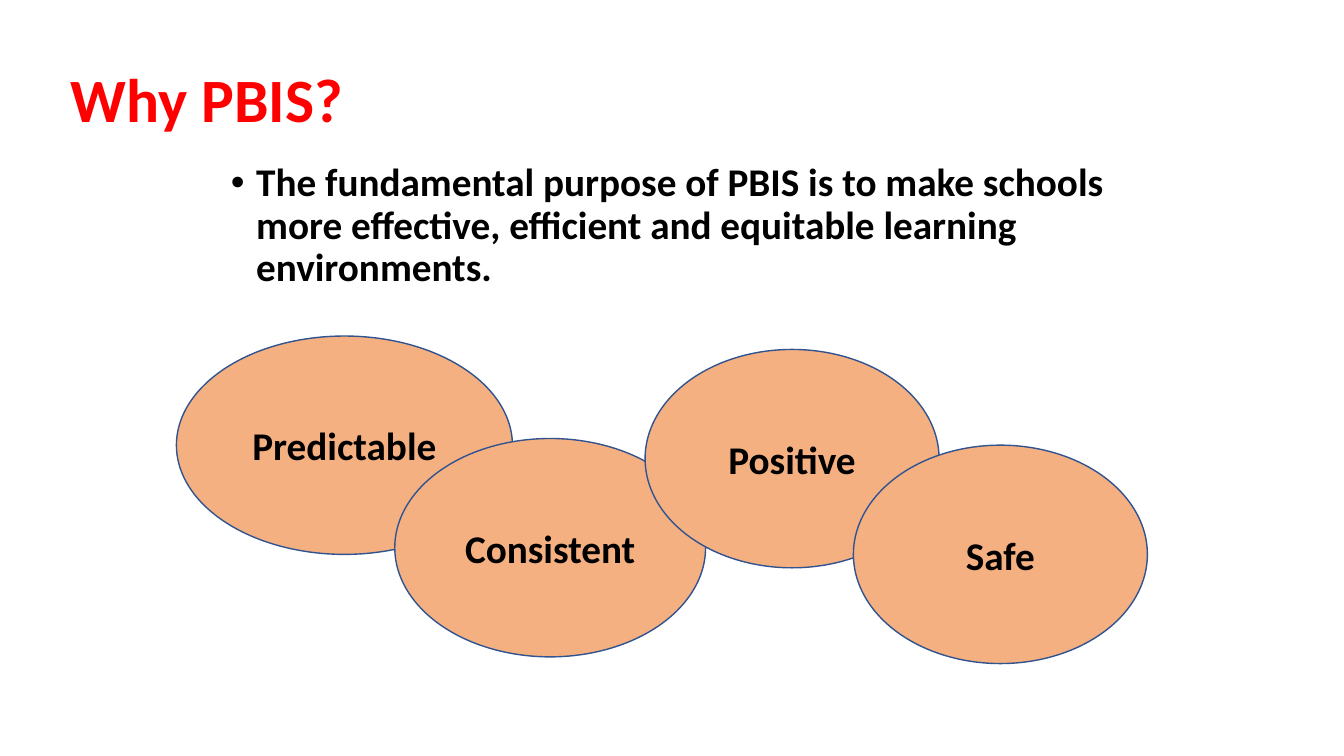
from dataclasses import dataclass

from pptx import Presentation
from pptx import util as u
from pptx.dml.color import RGBColor
from pptx.enum import shapes, text

RED = RGBColor(0xFF, 0x00, 0x00)
BLACK = RGBColor(0x00, 0x00, 0x00)
PEACH = RGBColor(0xF4, 0xB0, 0x81)
NAVY = RGBColor(0x31, 0x53, 0x8F)

# Grid of 160 columns by 90 rows
SLIDE_WIDTH, SLIDE_HEIGHT = u.Inches(13.33), u.Inches(7.5)
COLUMN, ROW = SLIDE_WIDTH / 160, SLIDE_HEIGHT / 90
OVAL_ROWS = 26


@dataclass(frozen=True)
class Area:
    column: float
    row: float
    columns: float
    rows: float

    def box(self) -> tuple[int, int, int, int]:
        return (round(self.column * COLUMN), round(self.row * ROW),
                round(self.columns * COLUMN), round(self.rows * ROW))


@dataclass(frozen=True)
class Quality:
    label: str
    column: float
    row: float
    columns: float


QUALITIES = [
    Quality("Predictable", 21, 40, 40),
    Quality("Consistent", 47, 52.2, 37),
    Quality("Positive", 76.8, 41.6, 35),
    Quality("Safe", 101.6, 53, 35),
]


def write(shape, words: str, *, size=28, color=BLACK, align=text.PP_ALIGN.LEFT,
          anchor=text.MSO_ANCHOR.MIDDLE, line_spacing=1.0, space_after=0):
    """Fill a shape with one bold paragraph and return that paragraph."""
    frame = shape.text_frame
    frame.text = words
    frame.word_wrap = True
    frame.auto_size = text.MSO_AUTO_SIZE.NONE
    frame.vertical_anchor = anchor
    paragraph = frame.paragraphs[0]
    paragraph.alignment = align
    paragraph.line_spacing = line_spacing
    paragraph.space_before = u.Pt(0)
    paragraph.space_after = u.Pt(space_after)
    font = paragraph.runs[0].font
    font.name, font.size, font.bold = "Calibri", u.Pt(size), True
    font.color.rgb = color
    return paragraph


def place(shape, area: Area) -> None:
    shape.left, shape.top, shape.width, shape.height = area.box()


def add_quality(slide, quality: Quality) -> None:
    area = Area(quality.column, quality.row, quality.columns, OVAL_ROWS)
    oval = slide.shapes.add_shape(shapes.MSO_SHAPE.OVAL, *area.box())
    oval.shadow.inherit = False
    oval.fill.solid()
    oval.fill.fore_color.rgb = PEACH
    oval.line.color.rgb = NAVY
    oval.line.width = u.Pt(1)
    write(oval, quality.label, align=text.PP_ALIGN.CENTER)


def main() -> None:
    deck = Presentation()
    deck.slide_width, deck.slide_height = SLIDE_WIDTH, SLIDE_HEIGHT
    slide = deck.slides.add_slide(deck.slide_layouts[1])

    # Title
    title = slide.shapes.title
    place(title, Area(7.2, 3.5, 138, 17.4))
    write(title, "Why PBIS?", size=44, color=RED, line_spacing=0.9)

    # Purpose, with the template's bullet and a hanging indent
    purpose = slide.placeholders[1]
    place(purpose, Area(26.3, 18.8, 107.5, 22.8))
    statement = write(
        purpose,
        "The fundamental purpose of PBIS is to make schools more effective, "
        "efficient and equitable learning environments.",
        anchor=text.MSO_ANCHOR.TOP, line_spacing=0.9, space_after=21)
    indent = u.Inches(0.25)
    properties = statement._p.get_or_add_pPr()
    properties.set("marL", str(indent))
    properties.set("indent", str(-indent))

    # Overlapping qualities, back to front
    for quality in QUALITIES:
        add_quality(slide, quality)

    deck.save("out.pptx")


if __name__ == "__main__":
    main()
